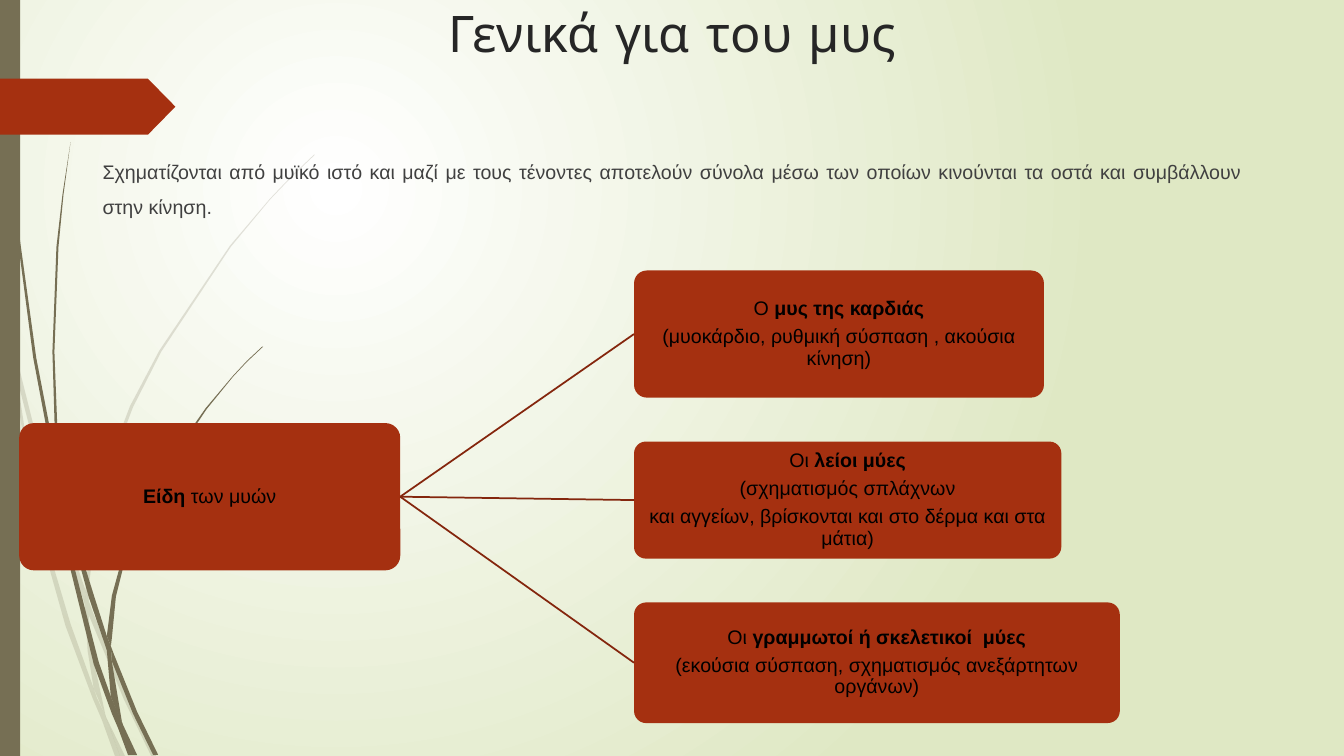
"""Build a slide that introduces the muscles and their three kinds."""
import dataclasses

import lxml.etree
import pptx
import pptx.dml.color
import pptx.enum.dml
import pptx.enum.shapes
import pptx.enum.text
import pptx.oxml.ns
import pptx.util

Pt = pptx.util.Pt
qn = pptx.oxml.ns.qn
Align = pptx.enum.text.PP_ALIGN
Anchor = pptx.enum.text.MSO_ANCHOR
Preset = pptx.enum.shapes.MSO_SHAPE


@dataclasses.dataclass(frozen=True)
class Theme:
    white: str = "FFFFFF"
    meadow: str = "DFE8C4"
    stem: str = "766F54"
    rust: str = "A53010"
    link: str = "84260D"
    title: str = "262626"
    body: str = "404040"
    label: str = "000000"
    title_font: str = "Comic Neue"
    body_font: str = "Arial"
    title_size: float = 36
    body_size: float = 14


theme = Theme()


def rgb(color):
    return pptx.dml.color.RGBColor.from_string(color)


def write_text(frame, paragraphs, *, color, size=theme.body_size, font=theme.body_font,
               align=Align.CENTER, anchor=Anchor.TOP, spacing=1.0, after=0, inset=(7.2, 3.6)):
    """Fill a frame with paragraphs, each a list of (text, bold) pairs."""
    frame.word_wrap = True
    frame.auto_size = pptx.enum.text.MSO_AUTO_SIZE.NONE
    frame.vertical_anchor = anchor
    frame.margin_left = frame.margin_right = Pt(inset[0])
    frame.margin_top = frame.margin_bottom = Pt(inset[1])
    for index, pieces in enumerate(paragraphs):
        paragraph = frame.add_paragraph() if index else frame.paragraphs[0]
        paragraph.alignment = align
        paragraph.line_spacing = spacing
        paragraph.space_before = Pt(0)
        paragraph.space_after = Pt(after)
        for text, bold in pieces:
            run = paragraph.add_run()
            run.text = text
            run.font.bold = bold
            run.font.name = font
            run.font.size = Pt(size)
            run.font.color.rgb = rgb(color)


presentation = pptx.Presentation()
presentation.slide_width = Pt(960)
presentation.slide_height = Pt(540)
slide = presentation.slides.add_slide(presentation.slide_layouts[5])
shapes = slide.shapes

background = slide.background.fill
background.gradient()
for stop, color in zip(background.gradient_stops, (theme.white, theme.meadow)):
    stop.color.rgb = rgb(color)
linear = slide.element.find(".//" + qn("a:lin"))
radial = lxml.etree.Element(qn("a:path"), {"path": "circle"})
lxml.etree.SubElement(radial, qn("a:fillToRect"),
                      {"l": "50000", "t": "50000", "r": "100000", "b": "100000"})
linear.getparent().replace(linear, radial)

pale_blades = [
    [(0, 282), (9, 322), (11, 350), (17, 376), (31, 469), (48, 545), (70, 619), (93, 683),
     (96, 692), (105, 711), (119, 750), (114, 750), (101, 714), (92, 693), (65, 621),
     (44, 546), (28, 470), (11, 350), (10, 344), (0, 299)],
    [(14, 345), (17, 376), (36, 450), (58, 522), (84, 599), (85, 586), (62, 520), (36, 433)],
    [(84, 599), (87, 646), (93, 683), (105, 711), (119, 750), (124, 750), (105, 711),
     (91, 646), (88, 610), (88, 596), (85, 586)],
    [(88, 596), (88, 610), (123, 694), (150, 750), (155, 750), (127, 692), (92, 607)],
    [(88, 584), (95, 522), (110, 462), (132, 404), (160, 349), (229, 245), (268, 198),
     (290, 175), (312, 154), (312, 153), (289, 175), (268, 197), (228, 244), (158, 348),
     (129, 403), (107, 461), (91, 522), (85, 584), (85, 586), (88, 596)],
]
dark_blades = [
    [(4, 0), (8, 109), (19, 232), (36, 355), (55, 453), (57, 481), (56, 477), (33, 355),
     (17, 233), (7, 110), (3, 0)],
    [(57, 477), (68, 557), (93, 659), (111, 708), (117, 722), (127, 749), (136, 749),
     (122, 719), (110, 691), (98, 657), (72, 556), (64, 505)],
    [(60, 472), (64, 505), (88, 592), (106, 645), (106, 631), (93, 590), (75, 532)],
    [(106, 645), (110, 691), (116, 706), (122, 719), (121, 716), (111, 656), (110, 641),
     (106, 631)],
    [(110, 641), (111, 656), (132, 708), (152, 749), (157, 749), (136, 706), (113, 649)],
    [(60, 472), (58, 453), (54, 349), (58, 245), (63, 193), (70, 141), (62, 193),
     (56, 245), (52, 349), (55, 449)],
    [(111, 633), (115, 592), (125, 552), (158, 476), (205, 406), (231, 374), (245, 359),
     (261, 344), (260, 344), (245, 358), (231, 373), (204, 405), (156, 474), (122, 551),
     (111, 591), (106, 631), (110, 641)],
]
decorations = []
for blades, opacity in ((pale_blades, 20), (dark_blades, 100)):
    for points in blades:
        builder = shapes.build_freeform(*points[0], scale=Pt(0.72))
        builder.add_line_segments(points[1:], close=True)
        decorations.append((builder.convert_to_shape(), theme.stem, opacity))
side_bar = shapes.add_shape(Preset.RECTANGLE, Pt(0), Pt(0), Pt(14.4), Pt(540))
arrow_tab = shapes.add_shape(Preset.PENTAGON, Pt(0), Pt(56.2), Pt(125.3), Pt(40))
arrow_tab.adjustments[0] = 0.49
decorations += [(side_bar, theme.stem, 100), (arrow_tab, theme.rust, 100)]
for shape, color, opacity in decorations:
    shape.shadow.inherit = False
    shape.fill.solid()
    shape.fill.fore_color.rgb = rgb(color)
    shape.line.fill.background()
    if opacity < 100:
        solid = shape.element.find(".//" + qn("a:srgbClr"))
        lxml.etree.SubElement(solid, qn("a:alpha"), {"val": str(opacity * 1000)})

title = shapes.title
title.left, title.top, title.width, title.height = Pt(66.2), Pt(-2), Pt(828), Pt(104)
write_text(title.text_frame, [[("Γενικά για του μυς", False)]],
           color=theme.title, size=theme.title_size, font=theme.title_font)

introduction = shapes.add_textbox(Pt(66.2), Pt(102), Pt(828), Pt(425))
write_text(introduction.text_frame, [[(
    "Σχηματίζονται από μυϊκό ιστό και μαζί με τους τένοντες αποτελούν σύνολα μέσω των "
    "οποίων κινούνται τα οστά και συμβάλλουν στην κίνηση.", False)]],
    color=theme.body, align=Align.JUSTIFY, spacing=1.5)

muscle_boxes = [
    ((13.7, 302.2, 272.2, 105.2), [[("Είδη", True), (" των μυών", False)]]),
    ((452.9, 193.2, 292.8, 90.8), [
        [("Ο ", False), ("μυς της καρδιάς", True)],
        [("(μυοκάρδιο, ρυθμική σύσπαση , ακούσια κίνηση)", False)]]),
    ((452.9, 315.4, 305.2, 83.6), [
        [("Οι ", False), ("λείοι μύες", True)],
        [("(σχηματισμός σπλάχνων", False)],
        [("και αγγείων, βρίσκονται και στο δέρμα και στα μάτια)", False)]]),
    ((452.9, 430.3, 347, 86.2), [
        [("Οι ", False), ("γραμμωτοί ή σκελετικοί  μύες", True)],
        [("(εκούσια σύσπαση, σχηματισμός ανεξάρτητων οργάνων)", False)]]),
]
boxes = []
for bounds, paragraphs in muscle_boxes:
    box = shapes.add_shape(Preset.ROUNDED_RECTANGLE, *map(Pt, bounds))
    box.adjustments[0] = 0.1
    box.shadow.inherit = False
    box.fill.solid()
    box.fill.fore_color.rgb = rgb(theme.rust)
    box.line.fill.background()
    write_text(box.text_frame, paragraphs, color=theme.label, anchor=Anchor.MIDDLE,
               spacing=0.9, after=4.9, inset=(0.7, 0.7))
    boxes.append(box)

root, *kinds = boxes
for kind in kinds:
    link = shapes.add_connector(pptx.enum.shapes.MSO_CONNECTOR.STRAIGHT, 0, 0, 0, 0)
    link.begin_connect(root, 3)
    link.end_connect(kind, 1)
    link.line.color.rgb = rgb(theme.link)
    link.line.width = Pt(1.25)
    lxml.etree.SubElement(link.element.spPr, qn("a:effectLst"))

presentation.save("out.pptx")
